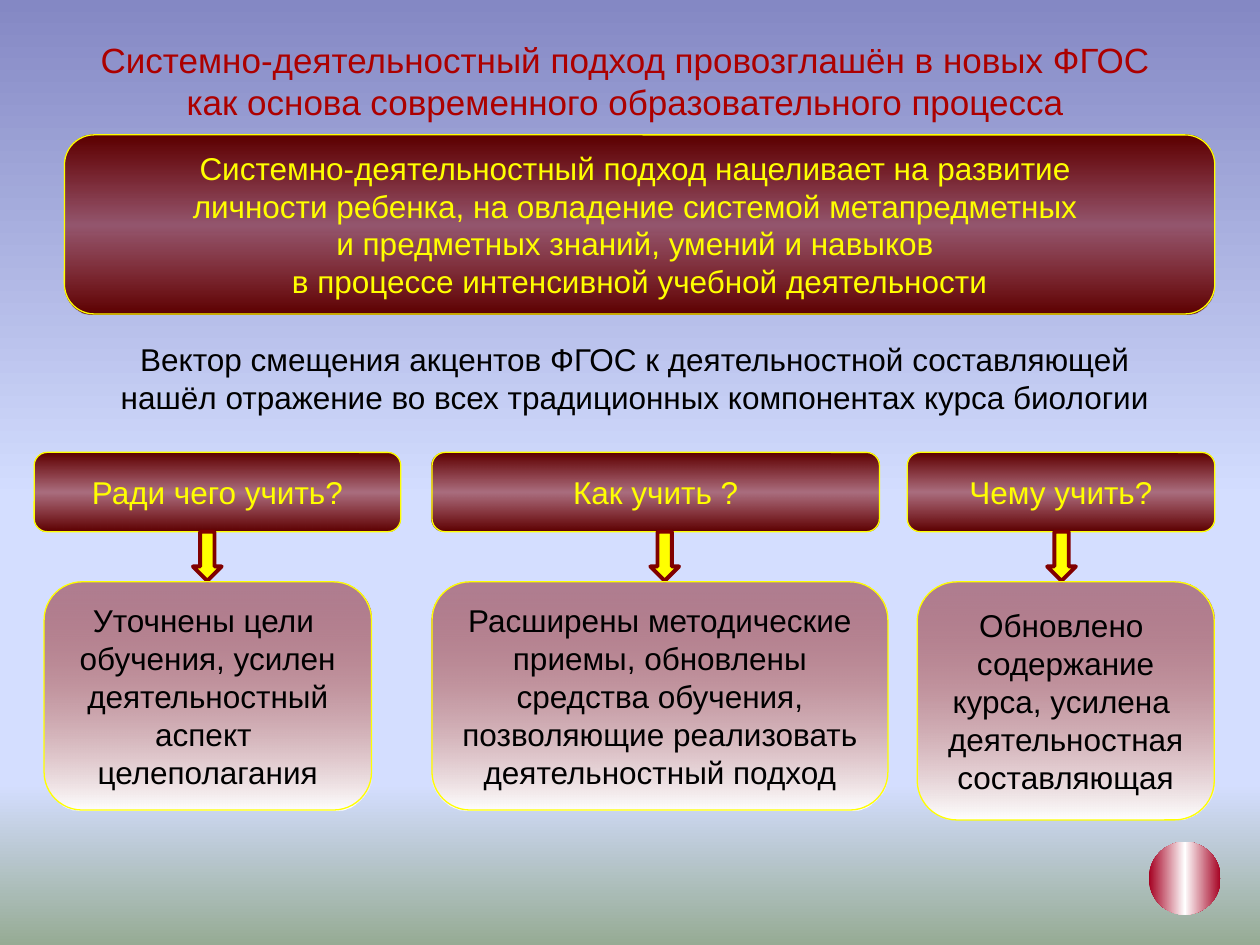
from dataclasses import dataclass
from lxml.etree import SubElement as Sub
from pptx import Presentation
from pptx.dml.color import RGBColor as Rgb
from pptx.enum.shapes import MSO_SHAPE as Kind
from pptx.enum.text import MSO_ANCHOR as Anchor, PP_ALIGN as Align
from pptx.oxml.ns import qn
from pptx.util import Cm, Pt


@dataclass(frozen=True)
class Theme:
    font: str = "Arial"
    big: int = 20
    body: int = 18
    red: str = "AC0000"
    gold: str = "FFFF00"
    wine: str = "800000"
    ink: str = "000000"
    sky: tuple = ((0, "8488C4", 100), (53, "D4DEFF", 100),
                  (83, "D4DEFF", 100), (100, "96AB94", 100))
    dark: tuple = ((0, "5C0000", 100), (50, "800000", 50), (100, "5C0000", 100))
    pale: tuple = ((0, "800000", 43), (100, "FFFFFF", 100))
    ball: tuple = ((0, "A50021", 100), (50, "FFFFFF", 100), (100, "A50021", 100))


T = Theme()

TITLE = ["Системно-деятельностный подход провозглашён в новых ФГОС "
         "как основа современного образовательного процесса"]
BANNER = ["Системно-деятельностный подход нацеливает на развитие ",
          "личности ребенка, на овладение системой метапредметных ",
          "и предметных знаний, умений и навыков ",
          "в процессе интенсивной учебной деятельности"]
NOTE = ["Вектор смещения акцентов ФГОС к деятельностной составляющей",
        "нашёл отражение во всех традиционных компонентах курса биологии"]
COLS = [
    dict(ask="Ради чего учить?", head=(0.69, 7.39), arrow=3.89, card=(0.89, 6.6, 4.6),
         text=["Уточнены цели ", "обучения, усилен", "деятельностный",
               "аспект ", "целеполагания"]),
    dict(ask="Как учить ?", head=(8.71, 9.02), arrow=13.11, card=(8.71, 9.19, 4.6),
         text=["Расширены методические", "приемы, обновлены", "средства обучения,",
               "позволяющие реализовать", "деятельностный подход"]),
    dict(ask="Чему учить?", head=(18.29, 6.2), arrow=21.11, card=(18.49, 5.99, 4.8),
         text=["Обновлено ", "содержание", "курса, усилена ",
               "деятельностная", "составляющая"]),
]
HEAD_Y, HEAD_H = 9.12, 1.6
ARROW_W, ARROW_H = 0.58, 0.99
CARD_Y = 11.73


def blend(fill, root, stops, angle=90):
    fill.gradient()
    grad = root.find(".//" + qn("a:gradFill"))
    grad.find(qn("a:lin")).set("ang", str(angle * 60000))
    group = grad.find(qn("a:gsLst"))
    for old in list(group):
        group.remove(old)
    for pos, color, alpha in stops:
        stop = Sub(group, qn("a:gs"), pos=str(pos * 1000))
        tint = Sub(stop, qn("a:srgbClr"), val=color)
        if alpha < 100:
            Sub(tint, qn("a:alpha"), val=str(alpha * 1000))


def write(shape, lines, color, size=T.body, wrap=False, anchor=Anchor.MIDDLE):
    frame = shape.text_frame
    frame.word_wrap = wrap
    frame.vertical_anchor = anchor
    for num, line in enumerate(lines):
        par = frame.add_paragraph() if num else frame.paragraphs[0]
        par.alignment = Align.CENTER
        run = par.add_run()
        run.text = line
        run.font.name = T.font
        run.font.size = Pt(size)
        run.font.color.rgb = Rgb.from_string(color)


def draw(slide, kind, box, edge=None, width=0.75):
    shape = slide.shapes.add_shape(kind, *map(Cm, box))
    shape.shadow.inherit = False
    if edge:
        shape.line.color.rgb = Rgb.from_string(edge)
        shape.line.width = Pt(width)
    else:
        shape.line.fill.background()
    return shape


def panel(slide, box, lines, stops, color):
    shape = draw(slide, Kind.ROUNDED_RECTANGLE, box, T.gold)
    blend(shape.fill, shape._element, stops)
    write(shape, lines, color)


def main():
    deck = Presentation()
    deck.slide_width, deck.slide_height = Cm(25.4), Cm(19.05)
    slide = deck.slides.add_slide(deck.slide_layouts[5])
    blend(slide.background.fill, slide._element, T.sky)

    title = slide.shapes.title
    title.left, title.top, title.width, title.height = map(Cm, (1.3, 0.33, 22.61, 2.59))
    write(title, TITLE, T.red, T.big, wrap=True)

    panel(slide, (1.3, 2.72, 23.19, 3.61), BANNER, T.dark, T.gold)
    note = slide.shapes.add_textbox(*map(Cm, (0.2, 6.73, 25.2, 1.78)))
    write(note, NOTE, T.ink, wrap=True, anchor=Anchor.TOP)

    for col in COLS:
        left, wide = col["head"]
        panel(slide, (left, HEAD_Y, wide, HEAD_H), [col["ask"]], T.dark, T.gold)
        arrow = draw(slide, Kind.DOWN_ARROW,
                     (col["arrow"], HEAD_Y + HEAD_H, ARROW_W, ARROW_H), T.wine, 2.25)
        arrow.fill.solid()
        arrow.fill.fore_color.rgb = Rgb.from_string(T.gold)
        left, wide, high = col["card"]
        panel(slide, (left, CARD_Y, wide, high), col["text"], T.pale, T.ink)

    ball = draw(slide, Kind.OVAL, (23.16, 16.97, 1.45, 1.47))
    blend(ball.fill, ball._element, T.ball, 0)
    deck.save("out.pptx")


if __name__ == "__main__":
    main()
